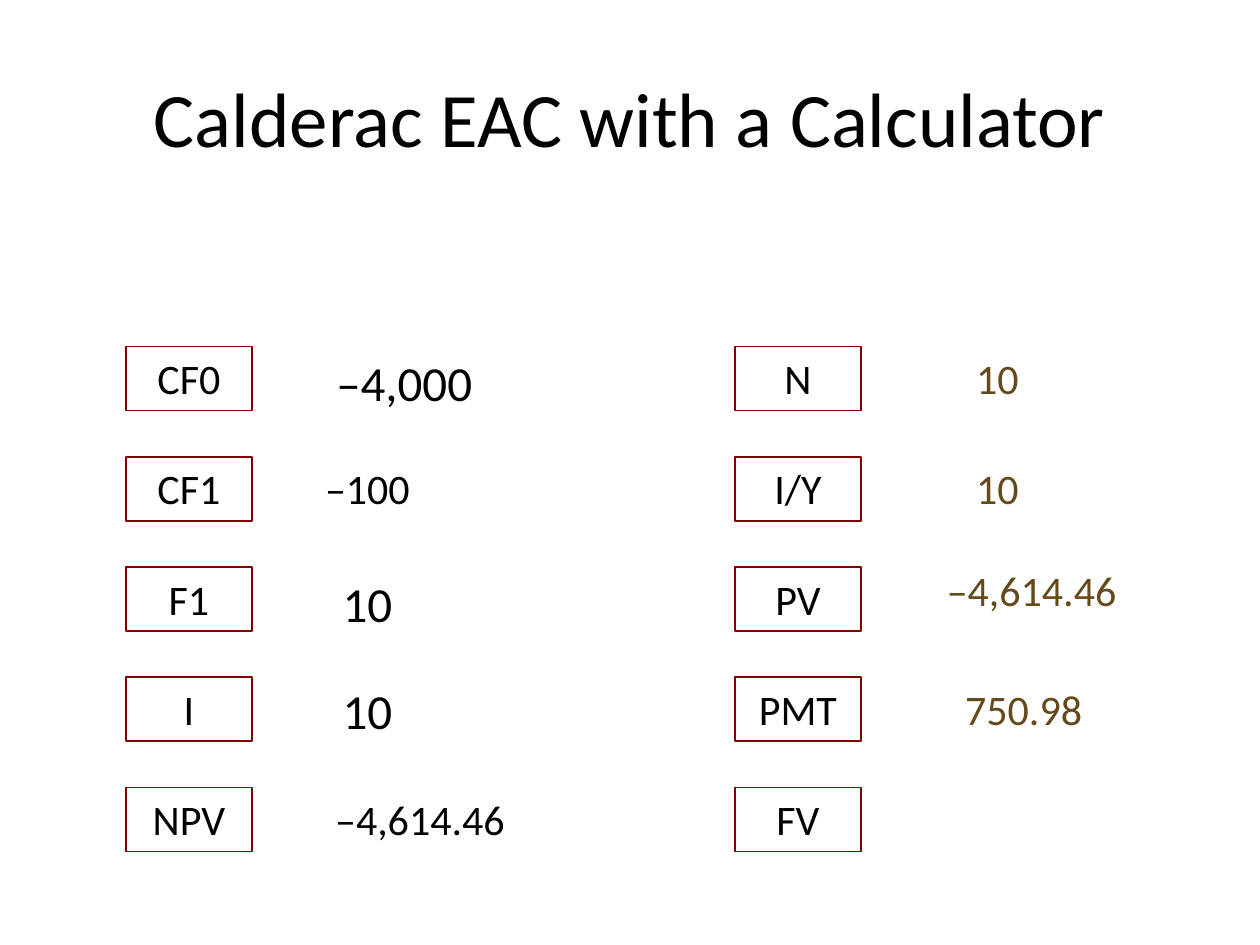
from pptx import Presentation
from pptx.dml.color import RGBColor
from pptx.enum.shapes import MSO_SHAPE
from pptx.enum.text import MSO_ANCHOR, PP_ALIGN
from pptx.util import Inches, Pt

RECT = MSO_SHAPE.RECTANGLE
TOP, MIDDLE = MSO_ANCHOR.TOP, MSO_ANCHOR.MIDDLE
LEFT, CENTER = PP_ALIGN.LEFT, PP_ALIGN.CENTER

SLIDE_W, SLIDE_H = 10, 7.5
UNIT = SLIDE_W / 120  # grid of 120 columns by 90 rows
KEY_W, KEY_H, VALUE_H = 12, 6.1, 6
BLACK, WHITE, MAROON, BROWN = "000000", "FFFFFF", "800000", "644A1A"

# Key, value, value width in columns, text size, row shift, alignment
CASH_FLOWS = [
    ("CF0", "–4,000", 19, 28, 0, CENTER),
    ("CF1", "–100", 12, 24, 0, CENTER),
    ("F1", "10", 12, 28, 0, CENTER),
    ("I", "10", 12, 28, -0.3, CENTER),
    ("NPV", "–4,614.46", 22, 24, 0, CENTER),
]
ANNUITY = [
    ("N", "10", 12, 24, 0, CENTER),
    ("I/Y", "10", 12, 24, 0, CENTER),
    ("PV", "–4,614.46", 25, 24, -0.8, LEFT),
    ("PMT", "750.98", 17, 24, 0, CENTER),
    ("FV", None, 0, 24, 0, CENTER),
]


def color(hex_value):
    return RGBColor.from_string(hex_value)


def grid(*cells):
    return [Inches(cell * UNIT) for cell in cells]


def write(holder, text, size, ink=BLACK, align=CENTER, anchor=TOP):
    frame = holder.text_frame
    frame.word_wrap = True
    frame.vertical_anchor = anchor
    line = frame.paragraphs[0]
    line.alignment = align
    run = line.add_run()
    run.text = text
    for name, value in {"name": "Calibri", "size": Pt(size)}.items():
        setattr(run.font, name, value)
    run.font.color.rgb = color(ink)


def add_panel(shapes, box, border=None):
    panel = shapes.add_shape(RECT, *grid(*box))
    panel.shadow.inherit = False
    panel.fill.solid()
    panel.fill.fore_color.rgb = color(WHITE)
    if border:
        panel.line.color.rgb = color(border)
        panel.line.width = Pt(1)
    else:
        panel.line.fill.background()
    return panel


def add_title(slide, box, text):
    write(add_panel(slide.shapes, box), text, 44, anchor=MIDDLE)


def add_register(slide, box, entries, value_offset, ink, filled):
    """Place a column of calculator keys with their values beside them."""
    left, top, _, height = box
    pitch = height / len(entries)
    keys = slide.shapes.add_group_shape()
    for row, (key, value, width, size, shift, align) in enumerate(entries):
        y = top + row * pitch
        # Calculator key
        write(add_panel(keys.shapes, (left, y, KEY_W, KEY_H), MAROON), key, 24)
        # Value entered or computed
        if value:
            place = (left + value_offset, y + shift, width, VALUE_H * size / 24)
            holder = (add_panel(slide.shapes, place) if filled
                      else slide.shapes.add_textbox(*grid(*place)))
            write(holder, value, size, ink, align)


def main():
    deck = Presentation()
    deck.slide_width, deck.slide_height = Inches(SLIDE_W), Inches(SLIDE_H)
    slide = deck.slides.add_slide(deck.slide_layouts[6])
    add_title(slide, (6, 3.6, 108, 15), "Calderac EAC with a Calculator")
    add_register(slide, (12, 33, 39, 52.5), CASH_FLOWS, 17, BLACK, True)
    add_register(slide, (70, 33, 44, 52.5), ANNUITY, 19, BROWN, False)
    deck.save("out.pptx")


if __name__ == "__main__":
    main()
